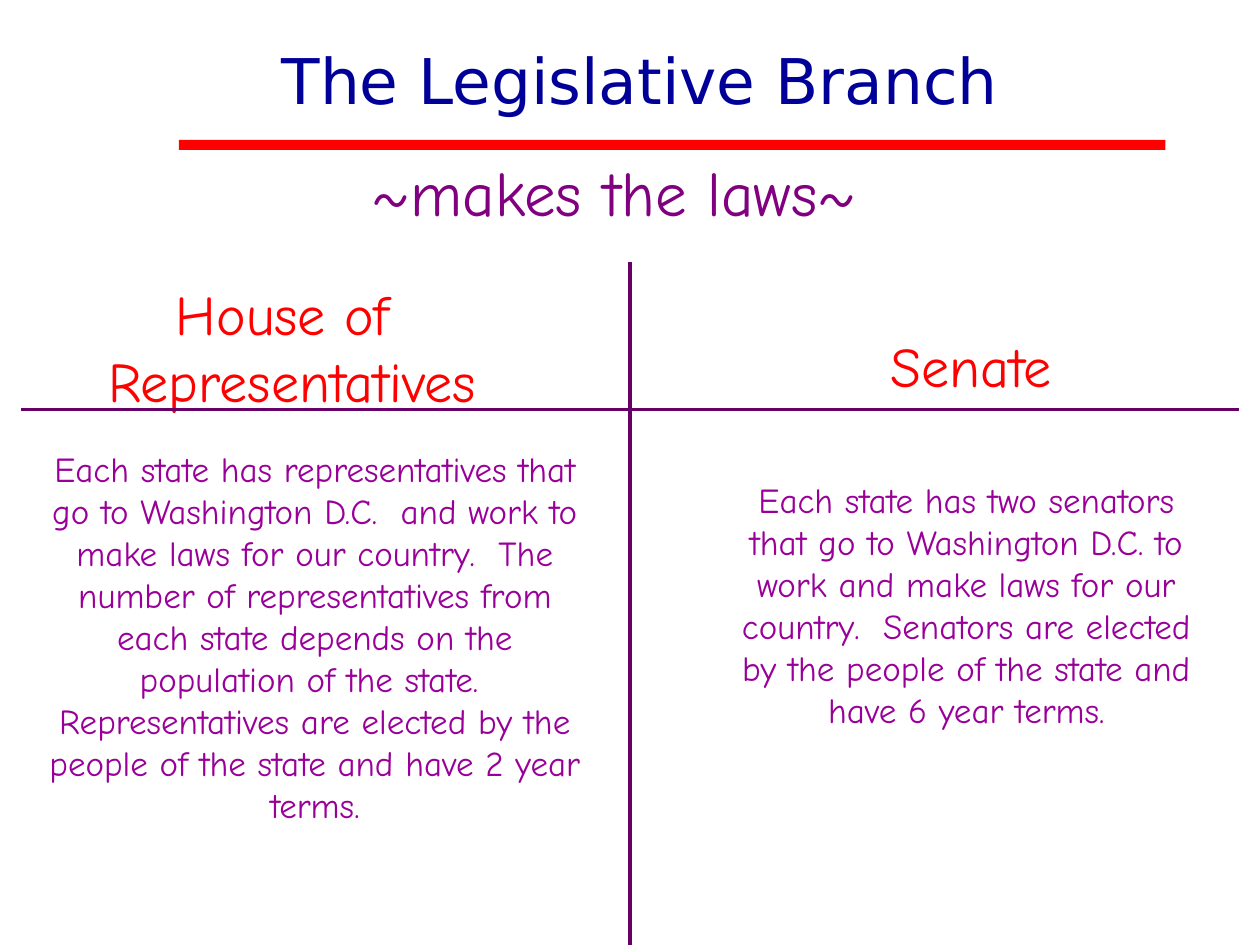
from lxml import etree
from pptx import Presentation
from pptx.dml.color import RGBColor
from pptx.enum.shapes import MSO_CONNECTOR, MSO_SHAPE
from pptx.enum.text import MSO_ANCHOR, MSO_AUTO_SIZE, PP_ALIGN
from pptx.oxml.ns import qn
from pptx.util import Inches, Pt

CENTER = PP_ALIGN.CENTER
TOP = MSO_ANCHOR.TOP
NO_AUTOFIT = MSO_AUTO_SIZE.NONE
STRAIGHT = MSO_CONNECTOR.STRAIGHT
RECTANGLE = MSO_SHAPE.RECTANGLE
COMPARISON_LAYOUT = 4

NAVY, RED, WHITE = "000099", "FF0000", "FFFFFF"
PURPLE, VIOLET, PLUM = "800080", "990099", "660066"

TITLE = {"name": "DejaVu Sans", "size": Pt(36), "bold": False}
SUBTITLE = {"name": "Comic Neue", "size": Pt(36), "bold": False}
HEADING = {"name": "Comic Neue", "size": Pt(32), "bold": False}
BODY = {"name": "Comic Neue", "size": Pt(20), "bold": False}

HOUSE = (
    "Each state has representatives that go to Washington D.C.  and work to "
    "make laws for our country.  The number of representatives from each state "
    "depends on the population of the state.  Representatives are elected by "
    "the people of the state and have 2 year terms."
)
SENATE = (
    "Each state has two senators that go to Washington D.C. to work and make "
    "laws for our country.  Senators are elected by the people of the state "
    "and have 6 year terms."
)


def rgb(hex_color):
    return RGBColor.from_string(hex_color)


def set_fill(shape, color):
    shape.fill.solid()
    shape.fill.fore_color.rgb = rgb(color)


def place(shape, box):
    for side, length in zip(("left", "top", "width", "height"), box):
        setattr(shape, side, Inches(length))


def remove_bullet(paragraph):
    properties = paragraph._p.get_or_add_pPr()
    properties.set("marL", "0")
    properties.set("indent", "0")
    etree.SubElement(properties, qn("a:buNone"))


def write(shape, lines, font, color, wrap=False):
    """Fill a shape with centred paragraphs, one for each line."""
    frame = shape.text_frame
    frame_format = {"word_wrap": wrap, "auto_size": NO_AUTOFIT, "vertical_anchor": TOP}
    for attribute, value in frame_format.items():
        setattr(frame, attribute, value)
    frame.text = "\n".join(lines)
    for paragraph in frame.paragraphs:
        remove_bullet(paragraph)
        paragraph.alignment = CENTER
        paragraph.space_before = Pt(0)
        for run in paragraph.runs:
            for attribute, value in font.items():
                setattr(run.font, attribute, value)
            run.font.color.rgb = rgb(color)


def add_bar(slide, box, color):
    bar = slide.shapes.add_shape(RECTANGLE, *map(Inches, box))
    bar.shadow.inherit = False
    set_fill(bar, color)
    bar.line.fill.background()


def add_divider(slide, *ends):
    divider = slide.shapes.add_connector(STRAIGHT, *map(Inches, ends))
    divider.line.color.rgb = rgb(PLUM)
    divider.line.width = Pt(2.25)
    etree.SubElement(divider._element.spPr, qn("a:effectLst"))


def fill_chamber(heading, heading_box, heading_lines, body, body_box, description):
    place(heading, heading_box)
    write(heading, heading_lines, HEADING, RED)
    place(body, body_box)
    set_fill(body, WHITE)
    write(body, [description], BODY, VIOLET, wrap=True)


def main():
    presentation = Presentation()
    presentation.slide_width = Inches(10)
    presentation.slide_height = Inches(7.5)
    slide = presentation.slides.add_slide(presentation.slide_layouts[COMPARISON_LAYOUT])
    title, house_heading, house_body, senate_heading, senate_body = slide.placeholders

    add_bar(slide, (1.42, 1.11, 7.83, 0.08), RED)
    place(title, (1.58, 0.28, 7, 0.58))
    write(title, ["The Legislative Branch"], TITLE, NAVY)
    subtitle = slide.shapes.add_textbox(*map(Inches, (3.25, 1.17, 3.25, 0.58)))
    write(subtitle, ["~makes the laws~"], SUBTITLE, PURPLE)

    fill_chamber(
        house_heading, (0.58, 2.17, 3.33, 0.92), ["House of", " Representatives"],
        house_body, (0.25, 3.5, 4.5, 3.43), HOUSE,
    )
    fill_chamber(
        senate_heading, (6.75, 2.58, 1.92, 0.33), ["Senate"],
        senate_body, (5.67, 3.75, 4, 2.77), SENATE,
    )
    add_divider(slide, 5, 2.08, 5, 7.5)
    add_divider(slide, 0.17, 3.25, 9.83, 3.25)
    presentation.save("out.pptx")


if __name__ == "__main__":
    main()
